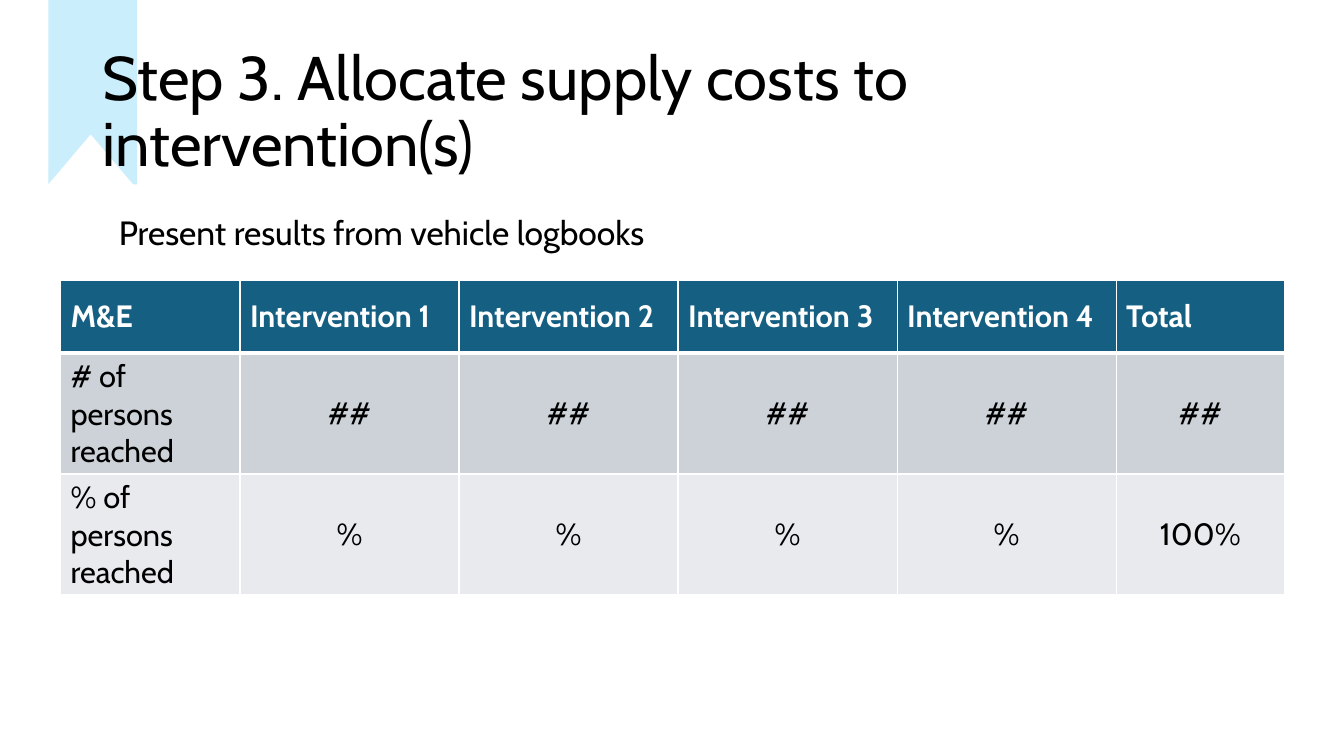
from lxml import etree
from pptx import Presentation
from pptx.dml.color import RGBColor
from pptx.enum.shapes import MSO_SHAPE
from pptx.enum.text import MSO_ANCHOR, PP_ALIGN
from pptx.oxml import parse_xml
from pptx.oxml.ns import nsdecls
from pptx.util import Pt


def rgb(value):
    return RGBColor.from_string(value)


def border(side, width):
    return parse_xml(
        f'<a:{side} {nsdecls("a")} w="{Pt(width)}"><a:solidFill>'
        f'<a:srgbClr val="FFFFFF"/></a:solidFill></a:{side}>'
    )


deck = Presentation()
deck.slide_width = Pt(960)
deck.slide_height = Pt(540)
slide = deck.slides.add_slide(deck.slide_layouts[6])

ribbon_parts = [
    (MSO_SHAPE.RECTANGLE, 34.6, 0, 63.4, 131.8, "CAEEFB"),
    (MSO_SHAPE.ISOSCELES_TRIANGLE, 28.8, 97.2, 72, 42.5, "FFFFFF"),
]
for kind, left, top, width, height, color in ribbon_parts:
    ribbon = slide.shapes.add_shape(kind, Pt(left), Pt(top), Pt(width), Pt(height))
    ribbon.shadow.inherit = False
    ribbon.fill.solid()
    ribbon.fill.fore_color.rgb = rgb(color)
    if kind == MSO_SHAPE.RECTANGLE:
        ribbon.line.fill.background()
    else:
        ribbon.line.color.rgb = rgb(color)
        ribbon.line.width = Pt(1.5)

texts = [
    ("Step 3. Allocate supply costs to intervention(s)", 66.2, 28.8, 104.4, 44, MSO_ANCHOR.MIDDLE),
    ("Present results from vehicle logbooks", 77.8, 151.2, 347, 24, MSO_ANCHOR.TOP),
]
for words, left, top, height, size, anchor in texts:
    frame = slide.shapes.add_textbox(Pt(left), Pt(top), Pt(828), Pt(height)).text_frame
    frame.word_wrap = True
    frame.vertical_anchor = anchor
    line = frame.paragraphs[0]
    line.text = words
    line.line_spacing = 0.9
    line.font.name = "Cabin"
    line.font.size = Pt(size)
    line.font.color.rgb = rgb("000000")

rows = [
    ["M&E", *[f"Intervention {n}" for n in range(1, 5)], "Total"],
    ["# of persons reached"] + ["##"] * 5,
    ["% of persons reached"] + ["%"] * 4 + ["100%"],
]
row_fills = ["156082", "CCD2D8", "E8EAED"]
column_widths = [128.2] + [156.5] * 4 + [120.2]

results_frame = slide.shapes.add_table(3, 6, Pt(43.2), Pt(200.4), Pt(874.8), Pt(224.6))
results = results_frame.table
for column, width in zip(results.columns, column_widths):
    column.width = Pt(width)
for row in results.rows:
    row.height = Pt(51.8)
results_frame.height = Pt(224.6)

for r, (labels, fill) in enumerate(zip(rows, row_fills)):
    for c, label in enumerate(labels):
        cell = results.cell(r, c)
        properties = cell._tc.get_or_add_tcPr()
        for side in ("lnL", "lnR", "lnT", "lnB"):
            heavy = (r, side) in [(0, "lnB"), (1, "lnT")]
            properties.append(border(side, 3 if heavy else 1))
        cell.fill.solid()
        cell.fill.fore_color.rgb = rgb(fill)
        cell.vertical_anchor = MSO_ANCHOR.MIDDLE
        entry = cell.text_frame.paragraphs[0]
        entry.text = label
        entry.alignment = PP_ALIGN.CENTER if r and c else PP_ALIGN.LEFT
        entry.font.name = "Cabin"
        entry.font.size = Pt(22)
        entry.font.bold = r == 0
        entry.font.color.rgb = rgb("000000" if r else "FFFFFF")

deck.save("out.pptx")
